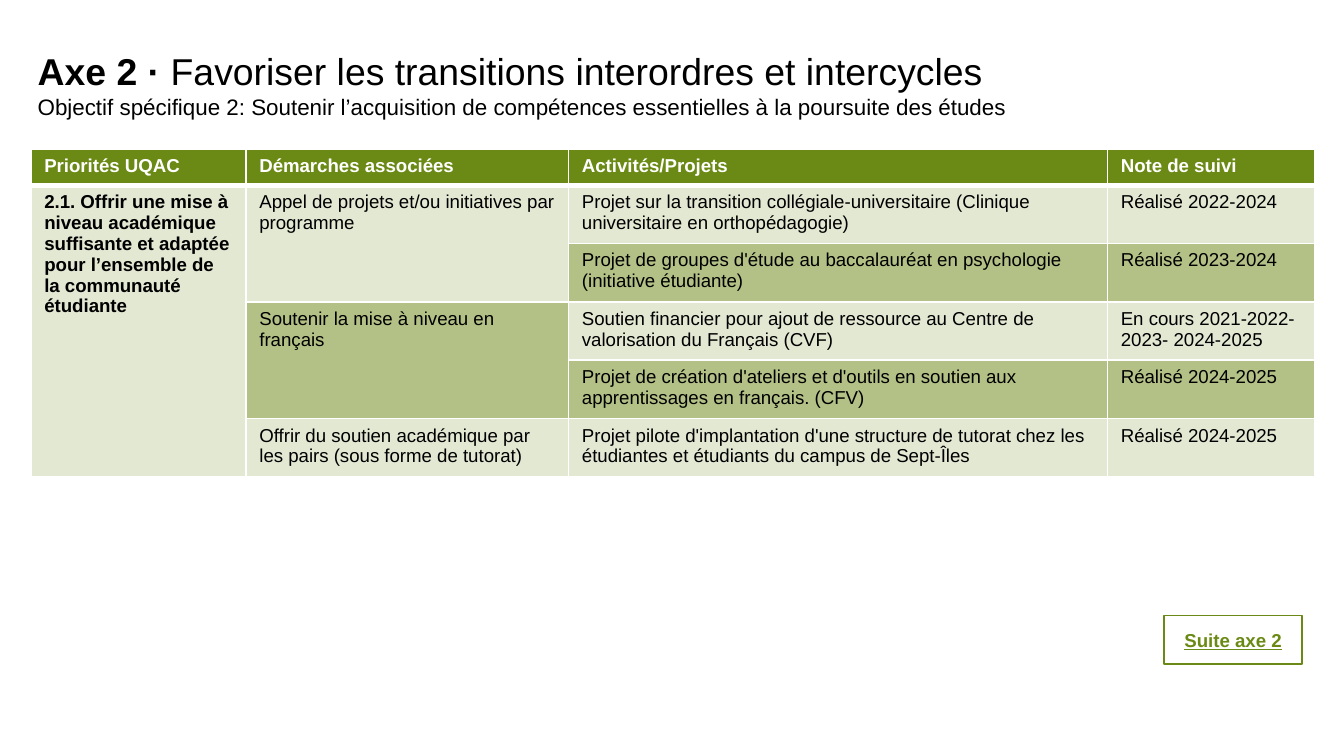
from pptx import Presentation
from pptx.dml.color import RGBColor
from pptx.enum.shapes import MSO_SHAPE
from pptx.enum.text import MSO_ANCHOR, MSO_AUTO_SIZE, PP_ALIGN
from pptx.oxml import parse_xml
from pptx.oxml.ns import nsdecls
from pptx.util import Inches, Pt

GREEN, LIGHT, MEDIUM, WHITE, BLACK = "6B8A15", "E3E8D3", "B3C186", "FFFFFF", "000000"
SHADES = [LIGHT, MEDIUM]


def style(run, size, color, bold=False):
    run.font.name = "Arial"
    run.font.size = Pt(size)
    run.font.bold = bold
    run.font.color.rgb = RGBColor.from_string(color)


def fill_cell(cell, text, fill, color=BLACK, bold=False, top=1, bottom=1):
    properties = cell._tc.get_or_add_tcPr()
    for side, width in [("L", 1), ("R", 1), ("T", top), ("B", bottom)]:
        properties.append(parse_xml(
            f'<a:ln{side} {nsdecls("a")} w="{Pt(width)}"><a:solidFill>'
            f'<a:srgbClr val="{WHITE}"/></a:solidFill></a:ln{side}>'))
    cell.fill.solid()
    cell.fill.fore_color.rgb = RGBColor.from_string(fill)
    if text:
        cell.text_frame.text = text
        style(cell.text_frame.paragraphs[0].runs[0], 10, color, bold)


prs = Presentation()
prs.slide_width, prs.slide_height = Inches(10), Inches(10 * 9 / 16)
slide = prs.slides.add_slide(prs.slide_layouts[5])

title = slide.shapes.title
title.left, title.top = Inches(0.18), Inches(0.31)
title.width, title.height = Inches(9.6), Inches(0.64)
heading = title.text_frame
heading.word_wrap = True
heading.auto_size = MSO_AUTO_SIZE.SHAPE_TO_FIT_TEXT
heading.vertical_anchor = MSO_ANCHOR.TOP
heading_lines = [
    [("Axe 2 · ", 20, True), ("Favoriser les transitions interordres et intercycles", 20, False)],
    [("Objectif spécifique 2: Soutenir l’acquisition de compétences essentielles "
      "à la poursuite des études", 12, False)],
]
heading.add_paragraph()
for paragraph, parts in zip(heading.paragraphs, heading_lines):
    paragraph.alignment = PP_ALIGN.LEFT
    for text, size, bold in parts:
        run = paragraph.add_run()
        run.text = text
        style(run, size, BLACK, bold)

headers = ["Priorités UQAC", "Démarches associées", "Activités/Projets", "Note de suivi"]
priority = ("2.1. Offrir une mise à niveau académique suffisante et adaptée "
            "pour l’ensemble de la communauté étudiante")
approaches = [
    ("Appel de projets et/ou initiatives par programme", [
        ("Projet sur la transition collégiale-universitaire (Clinique universitaire en orthopédagogie)",
         "Réalisé 2022-2024"),
        ("Projet de groupes d'étude au baccalauréat en psychologie (initiative étudiante)",
         "Réalisé 2023-2024"),
    ]),
    ("Soutenir la mise à niveau en français", [
        ("Soutien financier pour ajout de ressource au Centre de valorisation du Français (CVF)",
         "En cours 2021-2022-2023- 2024-2025"),
        ("Projet de création d'ateliers et d'outils en soutien aux apprentissages en français. (CFV)",
         "Réalisé 2024-2025"),
    ]),
    ("Offrir du soutien académique par les pairs (sous forme de tutorat)", [
        ("Projet pilote d'implantation d'une structure de tutorat chez les étudiantes "
         "et étudiants du campus de Sept-Îles", "Réalisé 2024-2025"),
    ]),
]
last_row = sum(len(projects) for _, projects in approaches)

table = slide.shapes.add_table(last_row + 1, len(headers), Inches(0.23), Inches(1.11),
                               Inches(9.55), Inches(2.43)).table
table.horz_banding = False
for column, width in zip(table.columns, [1.6, 2.4, 4.01, 1.54]):
    column.width = Inches(width)
for index, row in enumerate(table.rows):
    row.height = Inches(0.43 if index else 0.25)

for column, text in enumerate(headers):
    fill_cell(table.cell(0, column), text, GREEN, WHITE, True, bottom=3)

row = 1
for group, (approach, projects) in enumerate(approaches):
    first = row
    for project, note in projects:
        top = 3 if row == 1 else 1
        shade = SHADES[(row - 1) % 2]
        fill_cell(table.cell(row, 0), priority if row == 1 else "", LIGHT, bold=True, top=top)
        fill_cell(table.cell(row, 1), approach if row == first else "", SHADES[group % 2], top=top)
        fill_cell(table.cell(row, 2), project, shade, top=top)
        fill_cell(table.cell(row, 3), note, shade, top=top)
        row += 1
    if len(projects) > 1:
        table.cell(first, 1).merge(table.cell(row - 1, 1))
table.cell(1, 0).merge(table.cell(last_row, 0))

next_button = slide.shapes.add_shape(MSO_SHAPE.RECTANGLE, Inches(8.66), Inches(4.58),
                                     Inches(1.03), Inches(0.36))
next_button.shadow.inherit = False
next_button.fill.solid()
next_button.fill.fore_color.rgb = RGBColor.from_string(WHITE)
next_button.line.color.rgb = RGBColor.from_string(GREEN)
next_button.line.width = Pt(1)
label = next_button.text_frame
label.text = "Suite axe 2"
label.vertical_anchor = MSO_ANCHOR.MIDDLE
label.paragraphs[0].alignment = PP_ALIGN.CENTER
style(label.paragraphs[0].runs[0], 10, GREEN, True)
label.paragraphs[0].runs[0].font.underline = True

prs.save("out.pptx")
